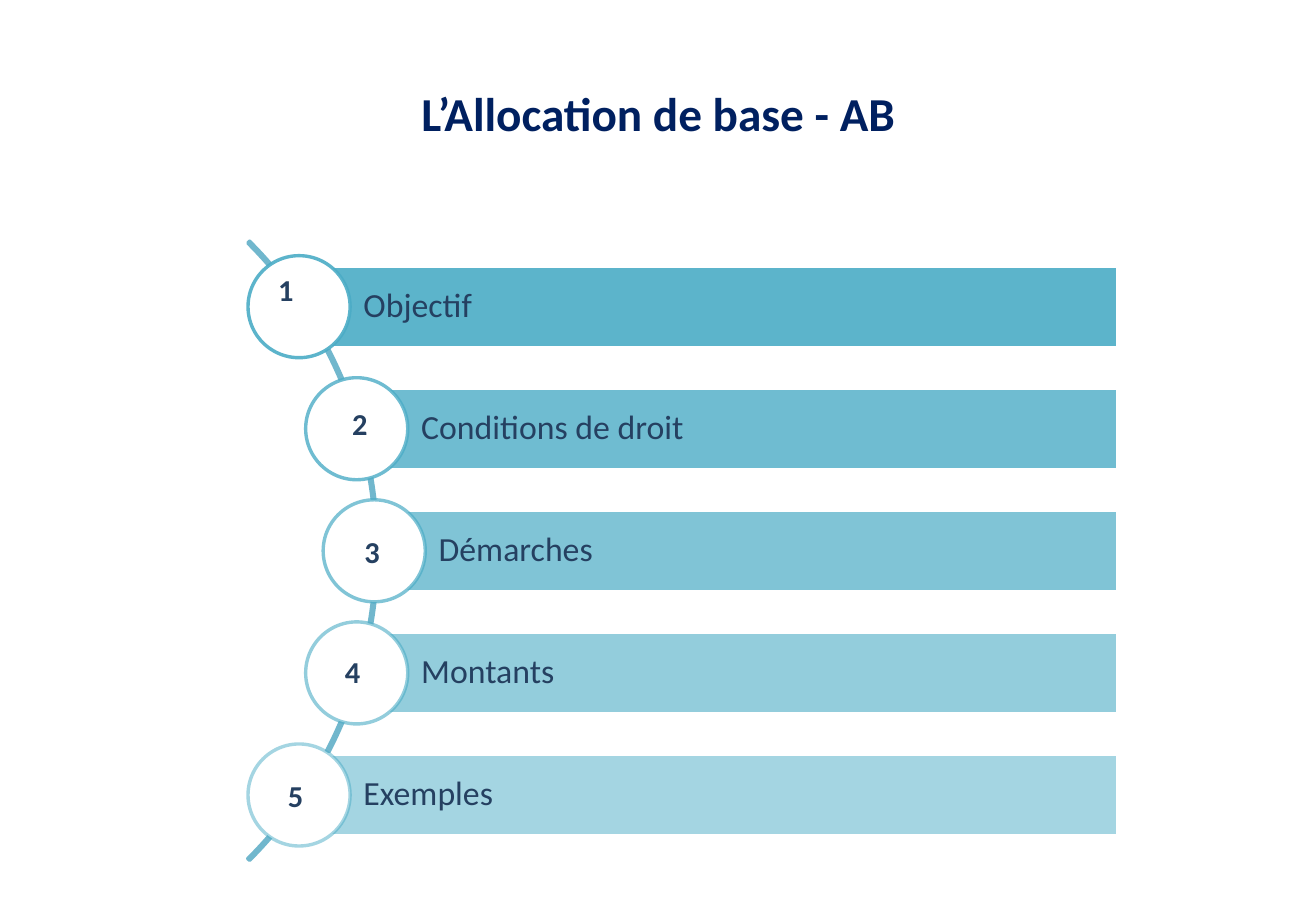
from math import sqrt
from pptx import Presentation
from pptx.dml.color import RGBColor
from pptx.enum.shapes import MSO_SHAPE
from pptx.enum.text import MSO_ANCHOR, PP_ALIGN
from pptx.oxml.ns import qn
from pptx.util import Inches, Pt
from lxml.etree import SubElement

deck = Presentation()
deck.slide_width, deck.slide_height = Inches(10.83), Inches(7.5)
slide = deck.slides.add_slide(deck.slide_layouts[6])
shapes = slide.shapes

TEAL, NAVY, WHITE = "4BACC6", "254061", "FFFFFF"
STEP = 1.005                 # row pitch
MID_X, MID_Y = -0.495, 4.535  # arc centre
ROUND = 3.575                # from arc centre to the circle centres
ARC = 7.21                   # arc frame
BAR, DISC, RIGHT = 0.67, 0.84, 9.2


def draw(kind, left, top, wide, high, line, fill=None, fade=None):
    """Add a shape; fade is (part, percent), part being "fill" or "line"."""
    item = shapes.add_shape(kind, *map(Inches, (left, top, wide, high)))
    item.shadow.inherit = False
    item.line.width = Pt(2)
    item.line.color.rgb = RGBColor.from_string(line)
    if fill:
        item.fill.solid()
        item.fill.fore_color.rgb = RGBColor.from_string(fill)
    else:
        item.fill.background()
    if fade:
        part, share = fade
        root = item._element.spPr
        if part == "line":
            root = root.find(qn("a:ln"))
        tint = root.find(qn("a:solidFill")).find(qn("a:srgbClr"))
        SubElement(tint, qn("a:alpha")).set("val", str(share * 1000))
    return item


def write(item, text, size, color, bold=False, align=PP_ALIGN.LEFT):
    para = item.text_frame.paragraphs[0]
    para.alignment = align
    run = para.add_run()
    run.text = text
    run.font.name, run.font.size, run.font.bold = "Calibri", Pt(size), bold
    run.font.color.rgb = RGBColor.from_string(color)
    return para


# Arc behind the list
arc = draw(MSO_SHAPE.BLOCK_ARC, MID_X - ARC / 2, MID_Y - ARC / 2, ARC, ARC, "71B7CD")
for i, value in enumerate((189, 27, 0.003)):
    arc.adjustments[i] = value

# Bars, with a circle on the arc at the start of each
topics = ["Objectif", "Conditions de droit", "Démarches", "Montants", "Exemples"]
for i, topic in enumerate(topics):
    rise = (i - 2) * STEP
    x, y = MID_X + sqrt(ROUND ** 2 - rise ** 2), MID_Y + rise
    share = 90 - 10 * i
    bar = draw(MSO_SHAPE.RECTANGLE, x, y - BAR / 2, RIGHT - x, BAR,
               WHITE, TEAL, ("fill", share))
    frame = bar.text_frame
    frame.word_wrap = True
    frame.vertical_anchor = MSO_ANCHOR.MIDDLE
    frame.margin_left = Inches(0.53)
    frame.margin_top = frame.margin_right = frame.margin_bottom = Inches(0.06)
    write(bar, topic, 20, NAVY).line_spacing = 0.9
    draw(MSO_SHAPE.OVAL, x - DISC / 2, y - DISC / 2, DISC, DISC,
         TEAL, WHITE, ("line", share))

# Title
title = shapes.add_textbox(*map(Inches, (0.54, 0.3, 9.75, 1.25)))
title.text_frame.word_wrap = True
title.text_frame.vertical_anchor = MSO_ANCHOR.MIDDLE
write(title, "L’Allocation de base - AB", 28, "002060", True, PP_ALIGN.CENTER)

# Numbers, each placed by hand in its circle
spots = [(2.19, 2.18), (2.8, 3.29), (2.9, 4.34), (2.74, 5.33), (2.27, 6.35)]
for i, (x, y) in enumerate(spots, 1):
    box = shapes.add_textbox(*map(Inches, (x, y, 0.33, 0.4)))
    box.text_frame.word_wrap = False
    write(box, str(i), 18, NAVY, True)

deck.save("out.pptx")
